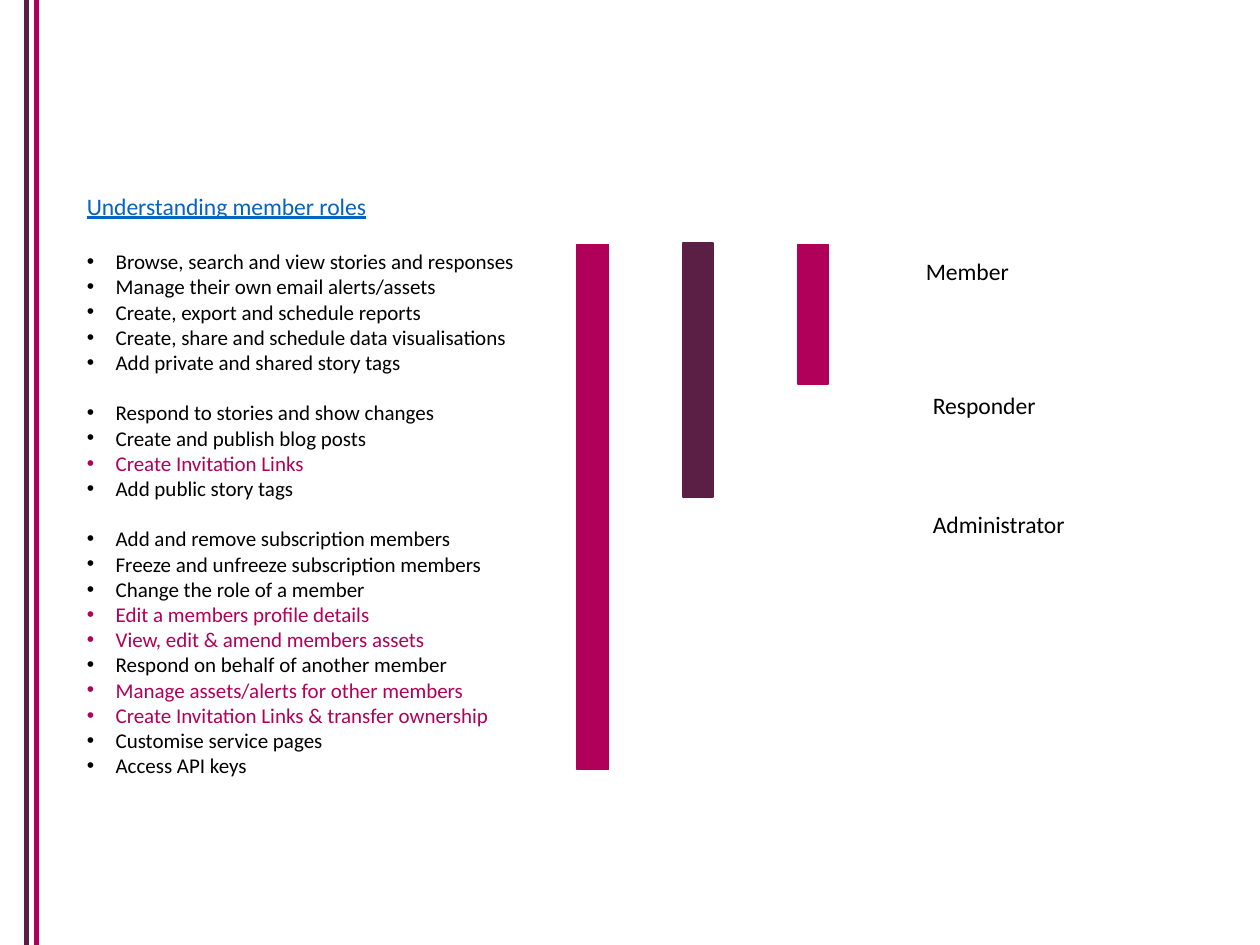
from dataclasses import dataclass

import pptx
import pptx.dml.color
import pptx.enum.shapes
import pptx.enum.text
import pptx.oxml.ns
import pptx.util
from lxml import etree

Pt = pptx.util.Pt
COLOURS = {"plum": "5B1E45", "magenta": "B10059", "link": "0563C1", "black": "000000"}
FONT = "Calibri"
HEADING_SIZE = 13.5
BULLET_SIZE = 12
BULLET_INDENT = 16.5


@dataclass
class Rule:
    x: float
    colour: str


@dataclass
class Bar:
    left: float
    top: float
    width: float
    height: float
    colour: str


@dataclass
class Label:
    text: str
    left: float
    top: float
    width: float


@dataclass
class Ability:
    text: str
    colour: str = "black"


RULES = [Rule(15.3, "plum"), Rule(21, "magenta")]
BARS = [
    Bar(455.8, 139.7, 17.5, 80, "magenta"),
    Bar(390.2, 139, 17.3, 145, "plum"),
    Bar(329.8, 139.7, 18, 300, "magenta"),
]
LABELS = [
    Label("Member", 522, 143.5, 87),
    Label("Responder", 526, 220, 87),
    Label("Administrator", 526, 288, 178),
]
ABILITY_GROUPS = [
    [
        Ability("Browse, search and view stories and responses"),
        Ability("Manage their own email alerts/assets"),
        Ability("Create, export and schedule reports"),
        Ability("Create, share and schedule data visualisations"),
        Ability("Add private and shared story tags"),
    ],
    [
        Ability("Respond to stories and show changes"),
        Ability("Create and publish blog posts"),
        Ability("Create Invitation Links", "magenta"),
        Ability("Add public story tags"),
    ],
    [
        Ability("Add and remove subscription members"),
        Ability("Freeze and unfreeze subscription members"),
        Ability("Change the role of a member"),
        Ability("Edit a members profile details", "magenta"),
        Ability("View, edit & amend members assets", "magenta"),
        Ability("Respond on behalf of another member"),
        Ability("Manage assets/alerts for other members", "magenta"),
        Ability("Create Invitation Links & transfer ownership", "magenta"),
        Ability("Customise service pages"),
        Ability("Access API keys"),
    ],
]


def rgb(name: str) -> pptx.dml.color.RGBColor:
    return pptx.dml.color.RGBColor.from_string(COLOURS[name])


def draw_rule(page, rule: Rule, height: float) -> None:
    line = page.shapes.add_connector(
        pptx.enum.shapes.MSO_CONNECTOR.STRAIGHT, Pt(rule.x), 0, Pt(rule.x), Pt(height)
    )
    line.line.color.rgb = rgb(rule.colour)
    line.line.width = Pt(3)
    etree.SubElement(line._element.spPr, pptx.oxml.ns.qn("a:effectLst"))


def draw_bar(page, bar: Bar) -> None:
    shape = page.shapes.add_shape(
        pptx.enum.shapes.MSO_SHAPE.RECTANGLE,
        Pt(bar.left), Pt(bar.top), Pt(bar.width), Pt(bar.height),
    )
    shape.shadow.inherit = False
    shape.fill.solid()
    shape.fill.fore_color.rgb = rgb(bar.colour)
    shape.line.color.rgb = rgb(bar.colour)
    shape.line.width = Pt(1)


def add_text_frame(page, left: float, top: float, width: float, height: float):
    box = page.shapes.add_textbox(Pt(left), Pt(top), Pt(width), Pt(height))
    frame = box.text_frame
    frame.word_wrap = True
    frame.auto_size = pptx.enum.text.MSO_AUTO_SIZE.SHAPE_TO_FIT_TEXT
    return frame


def write(para, text: str, size: float, colour: str) -> None:
    para.text = text
    para.font.name = FONT
    para.font.size = Pt(size)
    para.font.color.rgb = rgb(colour)


def draw_label(page, label: Label) -> None:
    frame = add_text_frame(page, label.left, label.top, label.width, 23.7)
    write(frame.paragraphs[0], label.text, HEADING_SIZE, "black")


def add_bullet(para, colour: str) -> None:
    properties = para._p.get_or_add_pPr()
    properties.set("marL", str(Pt(BULLET_INDENT)))
    properties.set("indent", str(-Pt(BULLET_INDENT)))
    bullet_colour = etree.SubElement(properties, pptx.oxml.ns.qn("a:buClr"))
    etree.SubElement(bullet_colour, pptx.oxml.ns.qn("a:srgbClr"), val=COLOURS[colour])
    etree.SubElement(properties, pptx.oxml.ns.qn("a:buFont"), typeface="Arial")
    etree.SubElement(properties, pptx.oxml.ns.qn("a:buChar"), char="•")


def draw_abilities(page) -> None:
    frame = add_text_frame(page, 42.5, 106, 348, 345.6)
    heading = frame.paragraphs[0]
    write(heading, "Understanding member roles", HEADING_SIZE, "link")
    heading.font.underline = True
    for group_index, group in enumerate(ABILITY_GROUPS):
        for index, ability in enumerate(group):
            para = frame.add_paragraph()
            add_bullet(para, ability.colour)
            write(para, ability.text, BULLET_SIZE, ability.colour)
            if index == 0:
                para.space_before = Pt(14.4 if group_index else 16.4)


def main() -> None:
    deck = pptx.Presentation()
    deck.slide_width, deck.slide_height = Pt(720), Pt(540)
    page = deck.slides.add_slide(deck.slide_layouts[6])
    for rule in RULES:
        draw_rule(page, rule, 540)
    draw_abilities(page)
    for bar in BARS:
        draw_bar(page, bar)
    for label in LABELS:
        draw_label(page, label)
    deck.save("out.pptx")


if __name__ == "__main__":
    main()
